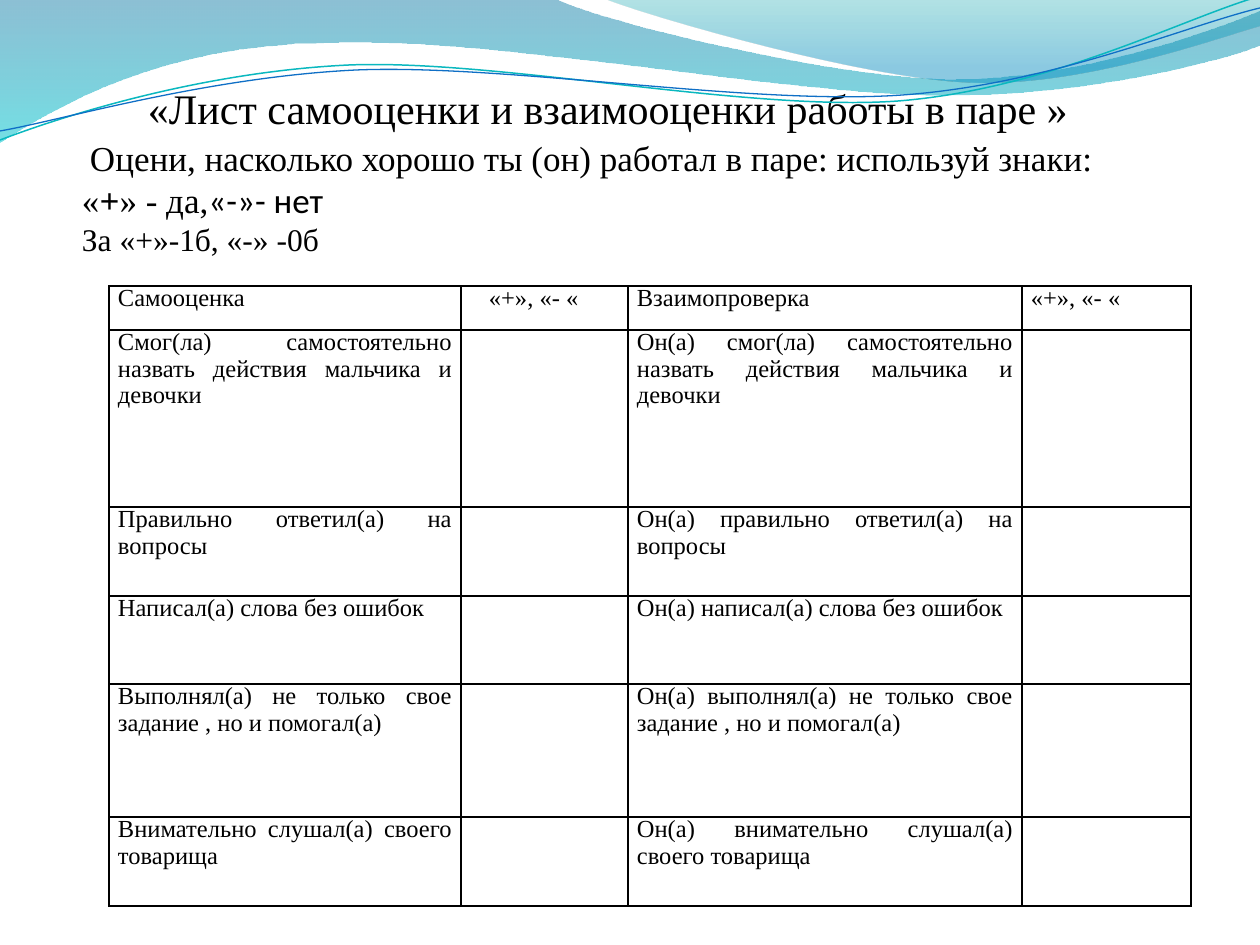
from lxml import etree
from pptx import Presentation
from pptx.dml.color import RGBColor
from pptx.enum.text import MSO_ANCHOR, MSO_AUTO_SIZE, PP_ALIGN
from pptx.oxml import parse_xml
from pptx.oxml.ns import nsdecls, qn
from pptx.util import Pt

LEFT, JUSTIFY = PP_ALIGN.LEFT, PP_ALIGN.JUSTIFY
BOTTOM, NO_AUTOFIT = MSO_ANCHOR.BOTTOM, MSO_AUTO_SIZE.NONE
PX = 914400 / 126
SERIF, SANS = "Times New Roman", "Calibri"
COLORS = {
    "text": "000000", "deep": "0074A1", "aqua": "00C6CF",
    "teal": "00A1A9", "sea": "008BBF", "teal_line": "0AB8BF", "blue_line": "0F6FC6",
}


def add_wave(shapes, start, segments, close):
    """Draw a freeform; two numbers make a straight segment, six a Bezier curve."""
    builder = shapes.build_freeform(round(start[0] * PX), round(start[1] * PX))
    builder.add_line_segments(
        [(round(segment[-2] * PX), round(segment[-1] * PX)) for segment in segments], close=close)
    shape = builder.convert_to_shape()
    shape.shadow.inherit = False
    for line, segment in zip(list(shape._element.iter(qn("a:lnTo"))), segments):
        if len(segment) == 6:
            curve = etree.Element(qn("a:cubicBezTo"))
            for x, y in zip(segment[::2], segment[1::2]):
                point = etree.SubElement(curve, qn("a:pt"))
                point.set("x", str(round(x * PX) - shape.left))
                point.set("y", str(round(y * PX) - shape.top))
            line.getparent().replace(line, curve)
    return shape


def add_run(paragraph, text, size, font_name=SERIF, bold=False):
    run = paragraph.add_run()
    run.text = text
    run.font.size = Pt(size)
    run.font.name = font_name
    run.font.bold = bold
    run.font.color.rgb = RGBColor.from_string(COLORS["text"])


presentation = Presentation()
presentation.slide_width, presentation.slide_height = round(1260 * PX), round(945 * PX)
slide = presentation.slides.add_slide(presentation.slide_layouts[5])

# Filled waves: start, segments, gradient stops (colour, opacity in percent, position)
filled_waves = [
    ((0, 0),
     [(557, 0), (600, 21, 837, 79, 955, 79), (1075, 79, 1207, 33, 1260, 11), (1260, 45),
      (1239, 55, 1096, 96, 940, 95), (784, 95, 481, 35, 324, 43), (163, 45, 58, 105, 0, 142)],
     [("deep", 45, 0), ("aqua", 55, 1)]),
    ((607, 0),
     [(641, 14, 859, 78, 969, 82), (1079, 87, 1211, 40, 1260, 26), (1260, 0)],
     [("teal", 30, 0), ("sea", 45, 0.8)]),
]
for start, segments, stops in filled_waves:
    wave = add_wave(slide.shapes, start, segments, True)
    wave.line.fill.background()
    wave.fill.gradient()
    wave.fill.gradient_angle = 270
    for stop, (color, _, position) in zip(wave.fill.gradient_stops, stops):
        stop.color.rgb = RGBColor.from_string(COLORS[color])
        stop.position = position
    for color_element, (_, opacity, _) in zip(wave._element.spPr.iter(qn("a:srgbClr")), stops):
        etree.SubElement(color_element, qn("a:alpha")).set("val", str(opacity * 1000))

line_waves = [
    ((0, 140), [(60, 117, 199, 72, 349, 65), (498, 59, 747, 112, 898, 101),
                (1049, 89, 1182, 19, 1257, -3)], "teal_line", 0.85),
    ((0, 131), [(59, 121, 207, 77, 357, 70), (508, 64, 752, 106, 903, 95),
                (1053, 84, 1185, 26, 1260, 8)], "blue_line", 0.75),
]
for start, segments, color, width in line_waves:
    wave = add_wave(slide.shapes, start, segments, False)
    wave.fill.background()
    wave.line.color.rgb = RGBColor.from_string(COLORS[color])
    wave.line.width = Pt(width)

# Heading with instructions
title = slide.shapes.title
title.left, title.top = round(69 * PX), round(39 * PX)
title.width, title.height = round(1102 * PX), round(229 * PX)
frame = title.text_frame
frame.margin_left, frame.margin_right = round(13 * PX), round(69 * PX)
frame.margin_top, frame.margin_bottom = 0, round(10 * PX)
frame.vertical_anchor = BOTTOM
frame.word_wrap = True
frame.auto_size = NO_AUTOFIT

heading = frame.paragraphs[0]
instruction = frame.add_paragraph()
scoring = frame.add_paragraph()
for paragraph, indent in [(heading, 66), (instruction, 8), (scoring, 0)]:
    paragraph._p.get_or_add_pPr().set("indent", str(round(indent * PX)))
    paragraph.alignment = LEFT
instruction.space_before = Pt(2)
add_run(heading, "«Лист самооценки и взаимооценки работы в паре »", 24)
add_run(instruction, "Оцени, насколько хорошо ты (он) работал в паре: используй знаки: «", 20)
add_run(instruction, "+", 20, bold=True)
add_run(instruction, "» - да,", 20)
add_run(instruction, "«-»- нет", 20, SANS)
add_run(scoring, "За «+»-1б, «-» -0б", 18)

# Assessment table
column_widths = [352, 167, 394, 169]
row_heights = [44, 177, 89, 88, 133, 89]
rows = [
    ("Самооценка", "«+», «- «", "Взаимопроверка", "«+», «- «"),
    ("Смог(ла) самостоятельно назвать действия мальчика и девочки", "",
     "Он(а) смог(ла) самостоятельно назвать действия мальчика и девочки", ""),
    ("Правильно ответил(а) на вопросы", "", "Он(а) правильно ответил(а) на вопросы", ""),
    ("Написал(а) слова без ошибок", "", "Он(а) написал(а) слова без ошибок", ""),
    ("Выполнял(а) не только свое задание , но и помогал(а)", "",
     "Он(а) выполнял(а) не только свое задание , но и помогал(а)", ""),
    ("Внимательно слушал(а) своего товарища", "",
     "Он(а) внимательно слушал(а) своего товарища", ""),
]
table = slide.shapes.add_table(
    len(rows), len(column_widths), round(109 * PX), round(286 * PX),
    round(sum(column_widths) * PX), round(sum(row_heights) * PX)).table
table.first_row = table.horz_banding = False
for column, width in zip(table.columns, column_widths):
    column.width = round(width * PX)
for row, height in zip(table.rows, row_heights):
    row.height = round(height * PX)

for row_index, texts in enumerate(rows):
    for column_index, text in enumerate(texts):
        cell = table.cell(row_index, column_index)
        cell.margin_left = cell.margin_right = round(9 * PX)
        cell.margin_top = cell.margin_bottom = 0
        cell_properties = cell._tc.get_or_add_tcPr()
        for side in ("lnL", "lnR", "lnT", "lnB"):
            cell_properties.append(parse_xml(
                f'<a:{side} {nsdecls("a")} w="12700"><a:solidFill>'
                f'<a:srgbClr val="{COLORS["text"]}"/></a:solidFill></a:{side}>'))
        cell.fill.background()
        if text:
            paragraph = cell.text_frame.paragraphs[0]
            paragraph.alignment = JUSTIFY
            paragraph.line_spacing = Pt(15)
            paragraph.space_after = Pt(6.8)
            add_run(paragraph, text, 14)
table.cell(0, 1).margin_left = round(28 * PX)

presentation.save("out.pptx")
